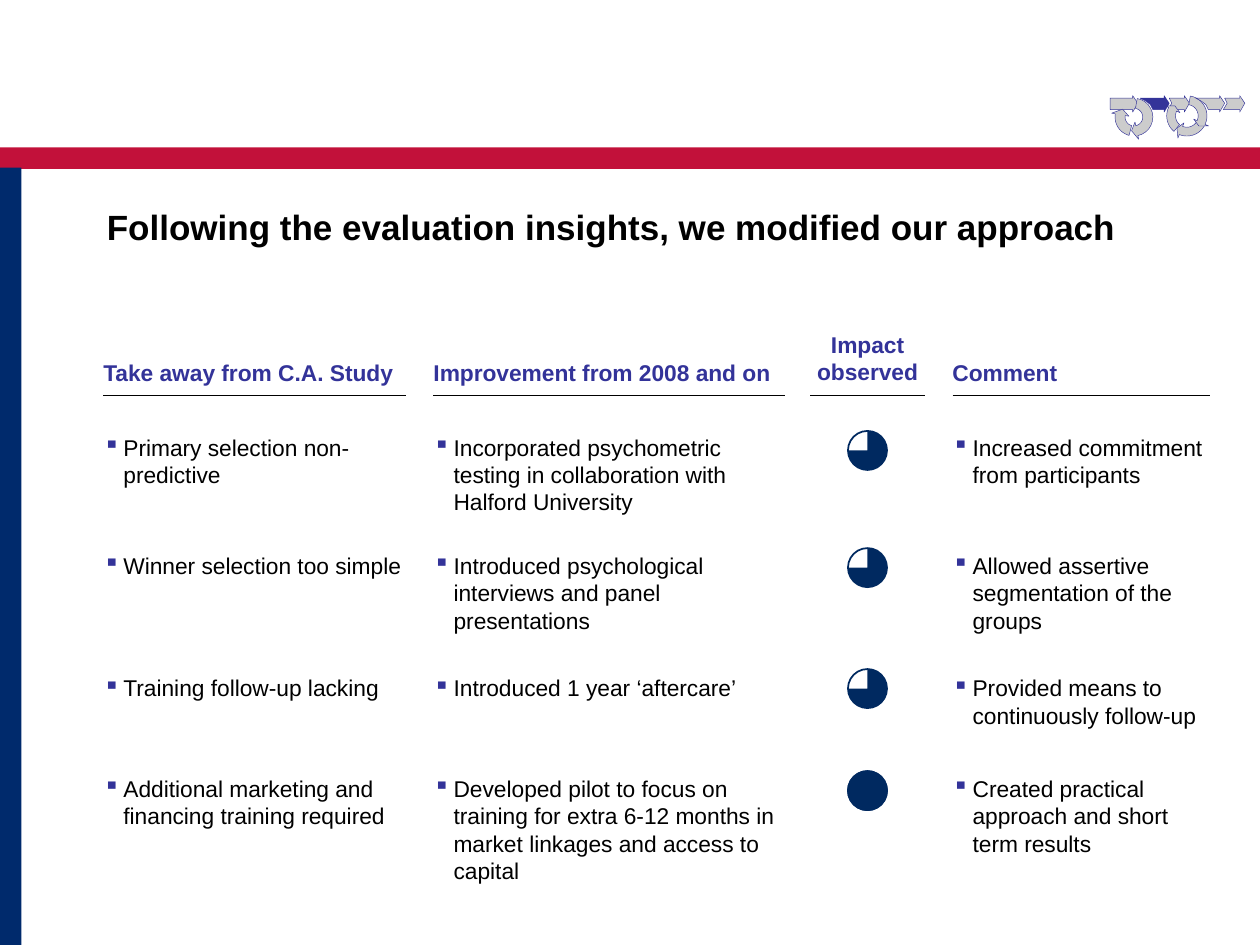
from math import cos, radians, sin

from lxml import etree
from pptx import Presentation
from pptx.dml.color import RGBColor
from pptx.enum import shapes as sh, text as tx
from pptx.oxml.ns import qn
from pptx.util import Inches, Pt

HUES = {"red": "C2113A", "blue": "002A6C", "navy": "002960", "violet": "333399",
        "grey": "CCCCCC", "black": "000000", "white": "FFFFFF"}
ROWS = (3.44, 4.38, 5.35, 6.15)
HEAD_END, RULE = 3.06, 3.14
COLUMNS = [
    (0.82, 2.4, "Take away from C.A. Study", [
        "Primary selection non-predictive",
        "Winner selection too simple",
        "Training follow-up lacking",
        "Additional marketing and financing training required"]),
    (3.44, 2.79, "Improvement from 2008 and on", [
        "Incorporated psychometric testing in collaboration with Halford University",
        "Introduced psychological interviews and panel presentations",
        "Introduced 1 year ‘aftercare’",
        "Developed pilot to focus on training for extra 6-12 months in "
        "market linkages and access to capital"]),
    (7.56, 2.04, "Comment", [
        "Increased commitment from participants",
        "Allowed assertive segmentation of the groups",
        "Provided means to continuously follow-up",
        "Created practical approach and short term results"]),
]
SHARES = (0.75, 0.75, 0.75, 1)


def tint(name):
    return RGBColor.from_string(HUES[name])


def paint(shape, fill, line=None, width=1):
    shape.shadow.inherit = False
    shape.fill.solid()
    shape.fill.fore_color.rgb = tint(fill)
    if line:
        shape.line.color.rgb = tint(line)
        shape.line.width = Pt(width)
    else:
        shape.line.fill.background()
    return shape


def add_shape(slide, kind, box, fill, line=None):
    return paint(slide.shapes.add_shape(kind, *map(Inches, box)), fill, line)


def add_text(slide, box, words, size=13, hue="black", bold=False, align="LEFT",
             anchor="TOP", inset=(0, 0), bullet=False):
    frame = slide.shapes.add_textbox(*map(Inches, box)).text_frame
    frame.word_wrap = True
    frame.vertical_anchor = getattr(tx.MSO_ANCHOR, anchor)
    frame.margin_left = frame.margin_right = Inches(inset[0])
    frame.margin_top = frame.margin_bottom = Inches(inset[1])
    para = frame.paragraphs[0]
    para.alignment = getattr(tx.PP_ALIGN, align)
    run = para.add_run()
    run.text = words
    run.font.name, run.font.size, run.font.bold = "Arial", Pt(size), bold
    run.font.color.rgb = tint(hue)
    if bullet:
        props = para._p.get_or_add_pPr()
        props.set("marL", str(Inches(0.16)))
        props.set("indent", str(-Inches(0.16)))
        shade = etree.SubElement(props, qn("a:buClr"))
        etree.SubElement(shade, qn("a:srgbClr")).set("val", HUES["violet"])
        etree.SubElement(props, qn("a:buChar")).set("char", "▪")


def add_head(slide, left, width, words, height=0.22, align="LEFT"):
    """Place a column title and the rule under it."""
    add_text(slide, (left, HEAD_END - height, width, height), words,
             hue="violet", bold=True, anchor="BOTTOM", align=align)
    rule = slide.shapes.add_connector(
        sh.MSO_CONNECTOR.STRAIGHT, *map(Inches, (left, RULE, left + width, RULE)))
    rule.line.color.rgb = tint("black")
    rule.line.width = Pt(1)
    etree.SubElement(rule._element.spPr, qn("a:effectLst"))


def add_column(slide, left, width, head, items):
    add_head(slide, left, width, head)
    for top, item in zip(ROWS, items):
        add_text(slide, (left, top, width, 0.44), item, bullet=True)


def add_ball(slide, box, share):
    """Draw a disc filled clockwise from the top by the given share."""
    add_shape(slide, sh.MSO_SHAPE.OVAL, box, "white", "navy")
    if share == 1:
        add_shape(slide, sh.MSO_SHAPE.OVAL, box, "navy", "navy")
    else:
        pie = add_shape(slide, sh.MSO_SHAPE.PIE, box, "navy")
        # Angles are in 60000ths of a degree; adjustments count 100000ths.
        pie.adjustments[0] = 270 * 0.6
        pie.adjustments[1] = (270 + 360 * share) % 360 * 0.6


def add_impact(slide, left, width):
    add_head(slide, left, width, "Impact observed", height=0.43, align="CENTER")
    size = 0.31
    for top, share in zip((3.42, 4.35, 5.31, 6.12), SHARES):
        add_ball(slide, (left + (width - size) / 2, top, size, size), share)


def add_outline(slide, points, fill="grey"):
    spots = [(Inches(x), Inches(y)) for x, y in points]
    pen = slide.shapes.build_freeform(*spots[0], scale=1.0)
    pen.add_line_segments(spots[1:], close=True)
    paint(pen.convert_to_shape(), fill, "violet", 0.25)


def add_arrow(slide, left, top, width, tail, fill="grey"):
    """Draw a straight arrow; tail lists its rear edge from top to bottom."""
    right, neck = left + width, left + width - 0.04
    points = [(neck, 0.11), (neck, 0.13), (right, 0.06), (neck, 0), (neck, 0.02)]
    points = [(x, top + y) for x, y in points]
    add_outline(slide, points + [(left + x, top + y) for x, y in tail], fill)


def add_bend(slide, mid, inner, outer, start, end, tip):
    """Draw an arrow bent clockwise round mid, with angles in degrees."""
    def spot(radius, angle):
        turn = radians(angle)
        return mid[0] + radius * cos(turn), mid[1] + radius * sin(turn)

    angles = [start + (end - start) * i / 12 for i in range(13)]
    points = [spot(outer, a) for a in angles]
    points += [spot(outer + 0.03, end), spot((inner + outer) / 2, tip),
               spot(inner - 0.03, end)]
    add_outline(slide, points + [spot(inner, a) for a in reversed(angles)])


def add_tracker(slide, left, top):
    """Draw the chain of steps, with the current one dark."""
    flat = [(0, 0.02), (0, 0.11)]
    notch = [(0.01, 0.02), (0.03, 0.06), (0, 0.11)]
    curve = [(0, 0.02), (0.04, 0.04), (0.08, 0.07), (0.1, 0.11)]
    add_arrow(slide, left + 0.46, top, 0.17, notch)
    add_arrow(slide, left, top, 0.22, flat)
    for x, y, inner, outer, bends in (
            (0.19, 0.17, 0.07, 0.15, [(105, 190, 215), (-80, 78, 100)]),
            (0.61, 0.16, 0.09, 0.16,
             [(130, 205, 220), (25, 112, 129), (-80, 25, 40)])):
        for bend in bends:
            add_bend(slide, (left + x, top + y), inner, outer, *bend)
    add_arrow(slide, left + 0.24, top, 0.23, curve, "violet")
    add_arrow(slide, left + 0.68, top, 0.23, curve)
    add_arrow(slide, left + 0.9, top, 0.17, notch)


def add_frame(slide):
    add_shape(slide, sh.MSO_SHAPE.RECTANGLE, (0, 1.17, 10, 0.17), "red")
    add_shape(slide, sh.MSO_SHAPE.RECTANGLE, (0, 1.33, 0.17, 6.17), "blue")
    add_text(slide, (0.75, 1.58, 8.5, 0.67),
             "Following the evaluation insights, we modified our approach",
             size=20, bold=True, inset=(0.1, 0.05))


def main():
    deck = Presentation()
    deck.slide_width, deck.slide_height = Inches(10), Inches(7.5)
    slide = deck.slides.add_slide(deck.slide_layouts[6])
    add_frame(slide)
    for column in COLUMNS:
        add_column(slide, *column)
    add_impact(slide, 6.43, 0.91)
    add_tracker(slide, 8.81, 0.76)
    deck.save("out.pptx")


if __name__ == "__main__":
    main()
